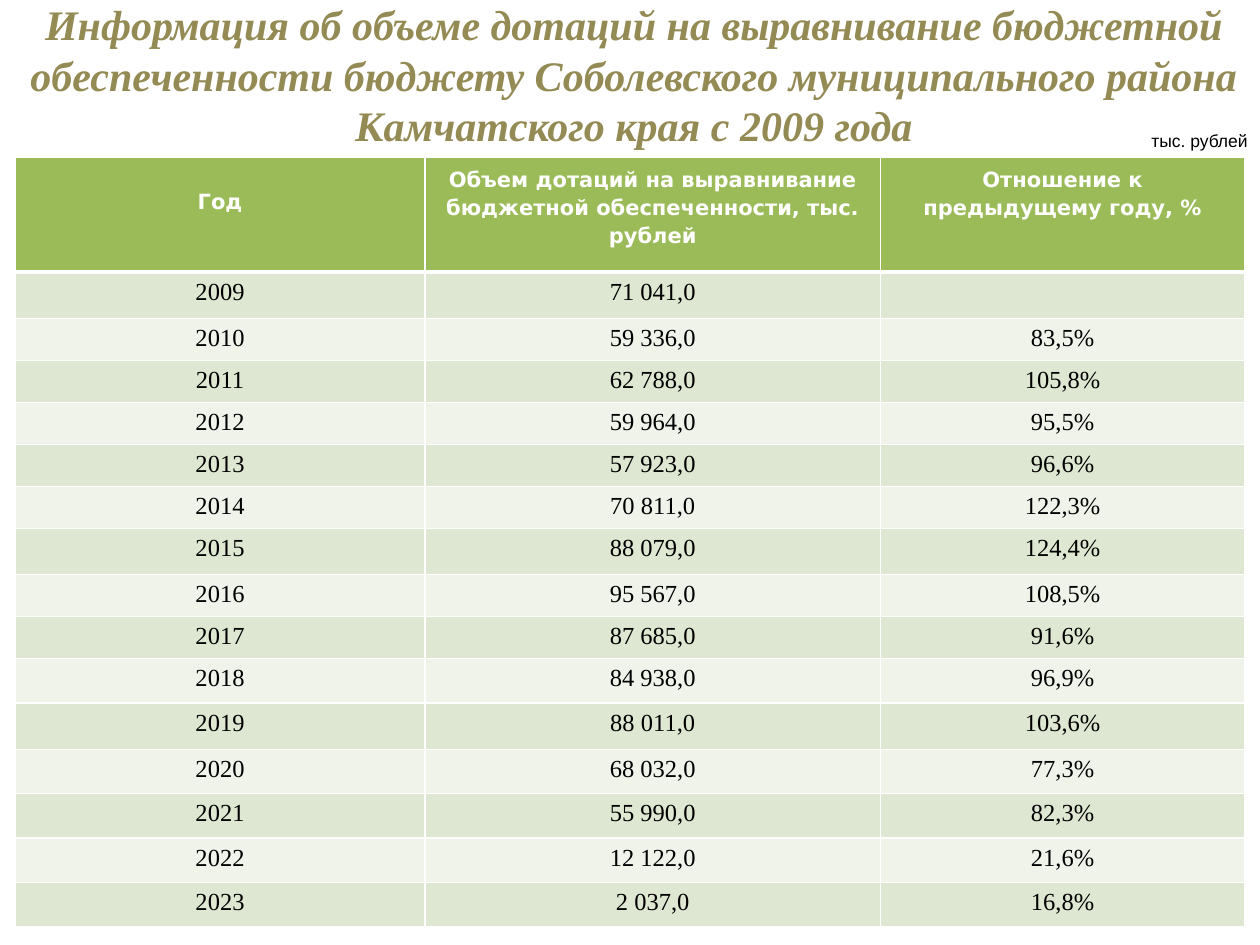
import pptx
import pptx.dml.color
import pptx.enum.text
import pptx.oxml.ns
import pptx.util
from lxml import etree

Pt = pptx.util.Pt
RGBColor = pptx.dml.color.RGBColor
PP_ALIGN = pptx.enum.text.PP_ALIGN

WHITE = RGBColor(0xFF, 0xFF, 0xFF)
BLACK = RGBColor(0x00, 0x00, 0x00)
OLIVE = RGBColor(0x94, 0x8A, 0x54)
HEADER_GREEN = RGBColor(0x9B, 0xBB, 0x59)
BANDS = (RGBColor(0xDE, 0xE7, 0xD1), RGBColor(0xEF, 0xF3, 0xEA))

TITLE = (
    "Информация об объеме дотаций на выравнивание бюджетной обеспеченности "
    "бюджету Соболевского муниципального района Камчатского края с 2009 года"
)
HEADERS = (
    "Год",
    "Объем дотаций на выравнивание бюджетной обеспеченности, тыс. рублей",
    "Отношение к предыдущему году, %",
)
GRANTS = (
    ("2009", "71 041,0", ""),
    ("2010", "59 336,0", "83,5%"),
    ("2011", "62 788,0", "105,8%"),
    ("2012", "59 964,0", "95,5%"),
    ("2013", "57 923,0", "96,6%"),
    ("2014", "70 811,0", "122,3%"),
    ("2015", "88 079,0", "124,4%"),
    ("2016", "95 567,0", "108,5%"),
    ("2017", "87 685,0", "91,6%"),
    ("2018", "84 938,0", "96,9%"),
    ("2019", "88 011,0", "103,6%"),
    ("2020", "68 032,0", "77,3%"),
    ("2021", "55 990,0", "82,3%"),
    ("2022", "12 122,0", "21,6%"),
    ("2023", "2 037,0", "16,8%"),
)
COLUMN_WIDTHS = (234, 260.5, 208)
HEADER_HEIGHT = 65.5
ROW_HEIGHT = 24
TALL_YEARS = ("2009", "2015", "2019")
MEDIUM_YEARS = ("2018", "2020", "2021", "2022", "2023")


def write(frame, text, font_name, size, color, align, bold=False, italic=False):
    paragraph = frame.paragraphs[0]
    paragraph.text = text
    paragraph.alignment = align
    font = paragraph.font
    font.name, font.size = font_name, Pt(size)
    font.bold, font.italic = bold, italic
    font.color.rgb = color
    return paragraph


def set_borders(cell, bottom=1):
    """Draw white borders, 1 pt wide except for the bottom one."""
    properties = cell._tc.get_or_add_tcPr()
    for side, width in (("L", 1), ("R", 1), ("T", 1), ("B", bottom)):
        line = etree.SubElement(
            properties, pptx.oxml.ns.qn(f"a:ln{side}"), w=str(Pt(width))
        )
        fill = etree.SubElement(line, pptx.oxml.ns.qn("a:solidFill"))
        etree.SubElement(fill, pptx.oxml.ns.qn("a:srgbClr"), val=str(WHITE))


def fill_cell(cell, color):
    cell.fill.solid()
    cell.fill.fore_color.rgb = color


def row_height(year):
    if year in TALL_YEARS:
        return 26.5
    return 25.4 if year in MEDIUM_YEARS else ROW_HEIGHT


def add_title(slide, left, top, width, height):
    frame = slide.shapes.add_textbox(
        Pt(left), Pt(top), Pt(width), Pt(height)
    ).text_frame
    frame.word_wrap = True
    frame.vertical_anchor = pptx.enum.text.MSO_ANCHOR.MIDDLE
    frame.margin_left = Pt(63.4)
    write(frame, TITLE, "Times New Roman", 24, OLIVE, PP_ALIGN.CENTER, True, True)


def add_unit_label(slide, left, top, width, height):
    frame = slide.shapes.add_textbox(
        Pt(left), Pt(top), Pt(width), Pt(height)
    ).text_frame
    frame.word_wrap = False
    frame.auto_size = pptx.enum.text.MSO_AUTO_SIZE.SHAPE_TO_FIT_TEXT
    write(frame, "тыс. рублей", "Arial", 10, BLACK, PP_ALIGN.RIGHT)


def add_grants_table(slide, left, top):
    heights = [HEADER_HEIGHT] + [row_height(year) for year, _, _ in GRANTS]
    table = slide.shapes.add_table(
        len(heights), len(HEADERS), Pt(left), Pt(top),
        Pt(sum(COLUMN_WIDTHS)), Pt(sum(heights)),
    ).table
    for column, width in zip(table.columns, COLUMN_WIDTHS):
        column.width = Pt(width)
    for row, height in zip(table.rows, heights):
        row.height = Pt(height)

    for cell, heading in zip(table.rows[0].cells, HEADERS):
        set_borders(cell, bottom=3)
        fill_cell(cell, HEADER_GREEN)
        paragraph = write(cell.text_frame, heading, "DejaVu Sans", 12, WHITE,
                          PP_ALIGN.CENTER, bold=True)
        paragraph.line_spacing = 1.15
    table.cell(0, 0).margin_top = Pt(16.75)

    for index, values in enumerate(GRANTS):
        for cell, value in zip(table.rows[index + 1].cells, values):
            set_borders(cell)
            fill_cell(cell, BANDS[index % 2])
            write(cell.text_frame, value, "Times New Roman", 14, BLACK,
                  PP_ALIGN.CENTER)
    for cell in table.rows[1].cells:
        top_line = cell._tc.tcPr.find(pptx.oxml.ns.qn("a:lnT"))
        top_line.set("w", str(Pt(3)))


def main():
    presentation = pptx.Presentation()
    presentation.slide_width, presentation.slide_height = Pt(720), Pt(540)
    slide = presentation.slides.add_slide(presentation.slide_layouts[6])
    add_grants_table(slide, 8.75, 90)
    add_unit_label(slide, 649.5, 70.5, 70.5, 19.5)
    add_title(slide, -65.5, 20, 799, 45)
    presentation.save("out.pptx")


if __name__ == "__main__":
    main()
